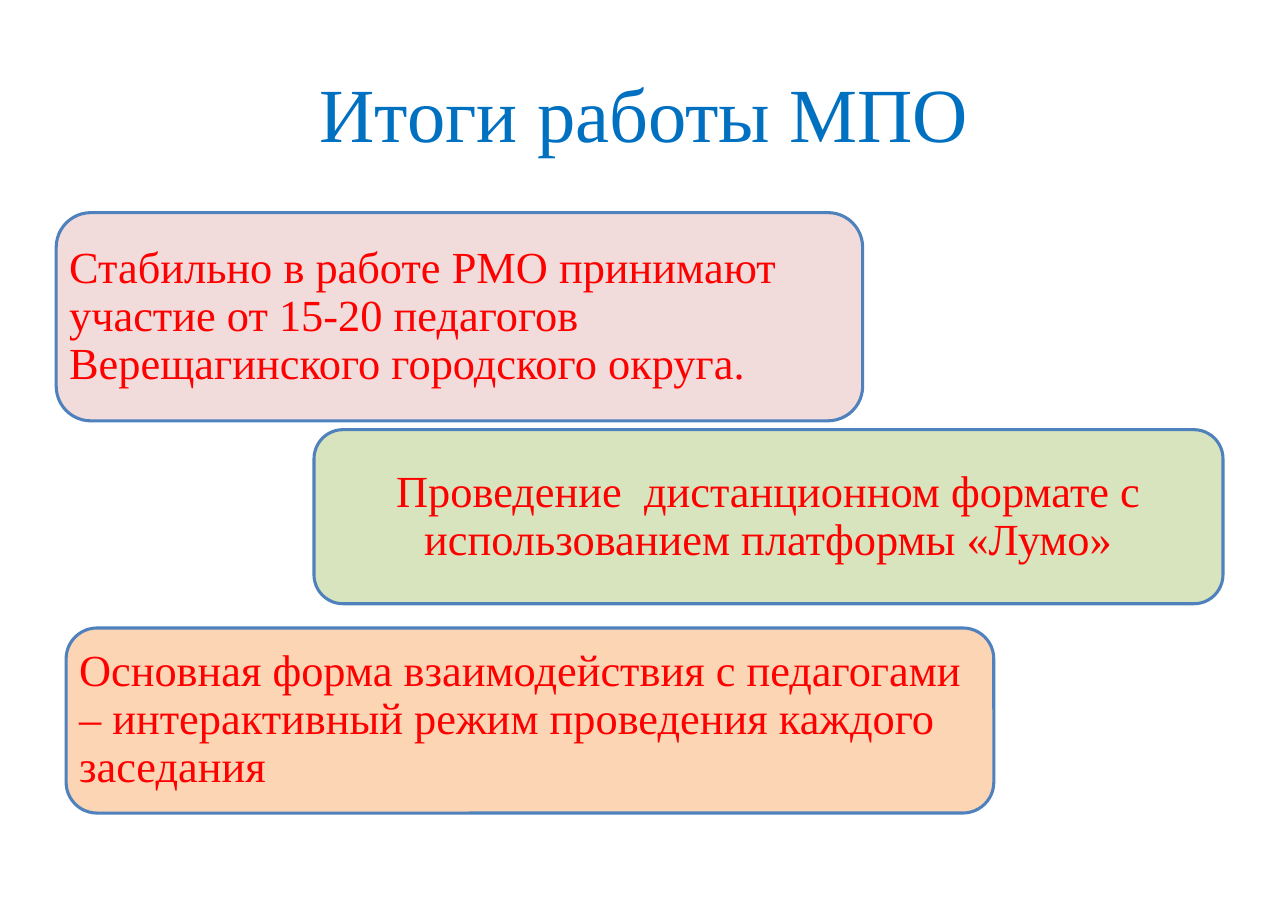
from dataclasses import dataclass

from pptx import Presentation
from pptx.dml.color import RGBColor
from pptx.enum.shapes import MSO_SHAPE
from pptx.enum.text import MSO_ANCHOR, PP_ALIGN
from pptx.util import Inches, Pt

ROUNDED = MSO_SHAPE.ROUNDED_RECTANGLE
MIDDLE = MSO_ANCHOR.MIDDLE
LEFT, CENTER = PP_ALIGN.LEFT, PP_ALIGN.CENTER
TITLE_ONLY = 5


@dataclass
class Theme:
    font: str = "Times New Roman"
    title_size: int = 50
    body_size: int = 29
    title: str = "0070C0"
    body: str = "FF0000"
    outline: str = "4F81BD"
    rose: str = "F2DCDB"
    green: str = "D7E4BD"
    peach: str = "FCD5B5"


def add_text(para, text, size, color):
    span = para.add_run()
    span.text = text
    span.font.name = theme.font
    span.font.size = Pt(size)
    span.font.color.rgb = RGBColor.from_string(color)


def set_margins(frame, across, down):
    frame.margin_left = frame.margin_right = Inches(across)
    frame.margin_top = frame.margin_bottom = Inches(down)


theme = Theme()
deck = Presentation()
deck.slide_width = Inches(11.69)
deck.slide_height = Inches(8.26)
page = deck.slides.add_slide(deck.slide_layouts[TITLE_ONLY])

title = page.shapes.title
title.left, title.top = Inches(0.58), Inches(0.33)
title.width, title.height = Inches(10.53), Inches(1.38)
title.text_frame.vertical_anchor = MIDDLE
title.text_frame.word_wrap = True
set_margins(title.text_frame, 0.11, 0.06)
heading = title.text_frame.paragraphs[0]
heading.alignment = CENTER
add_text(heading, "Итоги работы МПО", theme.title_size, theme.title)

results = [
    (0.51, 1.93, 7.32, 1.89, theme.rose, LEFT,
     "Стабильно в работе РМО принимают участие от 15-20 педагогов "
     "Верещагинского городского округа."),
    (2.85, 3.9, 8.25, 1.58, theme.green, CENTER,
     "Проведение  дистанционном формате с использованием платформы «Лумо»"),
    (0.6, 5.7, 8.42, 1.68, theme.peach, LEFT,
     "Основная форма взаимодействия с педагогами – интерактивный режим "
     "проведения каждого заседания"),
]
text_inset = 0.12
corner_inset_share = 0.05

for left, top, width, height, fill, alignment, text in results:
    box = page.shapes.add_shape(
        ROUNDED, Inches(left), Inches(top), Inches(width), Inches(height))
    box.shadow.inherit = False
    box.fill.solid()
    box.fill.fore_color.rgb = RGBColor.from_string(fill)
    box.line.color.rgb = RGBColor.from_string(theme.outline)
    box.line.width = Pt(2)
    frame = box.text_frame
    frame.word_wrap = True
    frame.vertical_anchor = MIDDLE
    margin = text_inset - corner_inset_share * height
    set_margins(frame, margin, margin)
    para = frame.paragraphs[0]
    para.alignment = alignment
    para.line_spacing = 0.9
    add_text(para, text, theme.body_size, theme.body)

deck.save("out.pptx")
